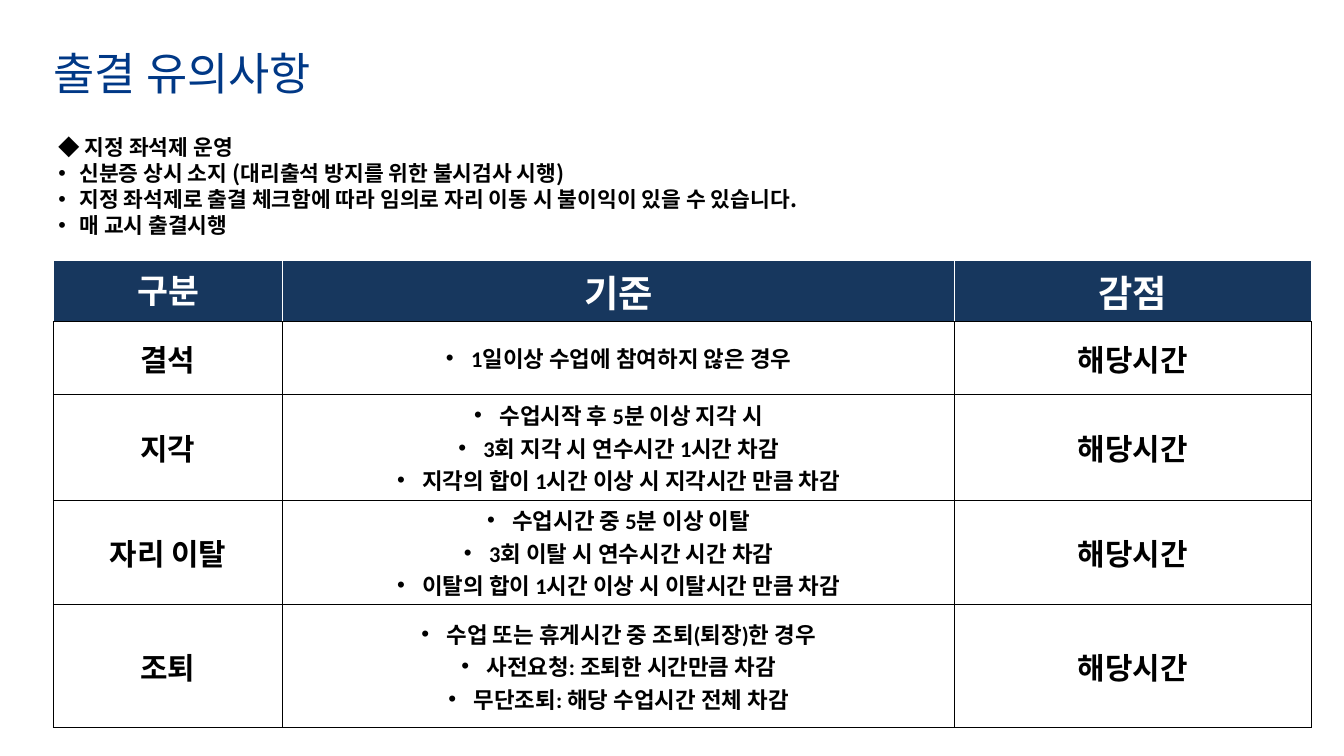
from lxml.etree import SubElement
from pptx import Presentation
from pptx.dml.color import RGBColor
from pptx.enum.text import MSO_ANCHOR as Anchor, MSO_AUTO_SIZE as AutoSize, PP_ALIGN as Align
from pptx.oxml.ns import qn
from pptx.util import Pt

COLORS = {"title": "003886", "header": "17375E", "white": "FFFFFF", "black": "000000"}
HANGUL, LATIN = "Noto Sans CJK KR", "Calibri"

TITLE = "출결 유의사항"
MARK, HEADING = "◆ ", "지정 좌석제 운영"
NOTICES = [
    "신분증 상시 소지 (대리출석 방지를 위한 불시검사 시행)",
    "지정 좌석제로 출결 체크함에 따라 임의로 자리 이동 시 불이익이 있을 수 있습니다.",
    "매 교시 출결시행",
]
HEADERS = [("구분", 36), ("기준", 40), ("감점", 40)]
RULES = [
    ("결석", ["1일이상 수업에 참여하지 않은 경우"], "해당시간"),
    ("지각", ["수업시작 후 5분 이상 지각 시", "3회 지각 시 연수시간 1시간 차감",
            "지각의 합이 1시간 이상 시 지각시간 만큼 차감"], "해당시간"),
    ("자리 이탈", ["수업시간 중 5분 이상 이탈", "3회 이탈 시 연수시간 시간 차감",
               "이탈의 합이 1시간 이상 시 이탈시간 만큼 차감"], "해당시간"),
    ("조퇴", ["수업 또는 휴게시간 중 조퇴(퇴장)한 경우", "사전요청: 조퇴한 시간만큼 차감",
            "무단조퇴: 해당 수업시간 전체 차감"], "해당시간"),
]
COL_WIDTHS = [246, 719.5, 382.5]
ROW_HEIGHTS = [54, 78.5, 113, 91.5, 132]


def place(s, left, top, width, height):
    s.left, s.top, s.width, s.height = Pt(left), Pt(top), Pt(width), Pt(height)


def style(r, size, color, font=HANGUL, bold=True):
    r.font.size, r.font.bold, r.font.name = Pt(size), bold, font
    r.font.color.rgb = RGBColor.from_string(COLORS[color])
    SubElement(r.font._element, qn("a:ea")).set("typeface", HANGUL)


def set_bullet(p, indent):
    pPr = p._p.get_or_add_pPr()
    pPr.set("marL", str(Pt(indent)))
    pPr.set("indent", str(-Pt(indent)))
    if indent:
        SubElement(pPr, qn("a:buFont")).set("typeface", "Arial")
        SubElement(pPr, qn("a:buChar")).set("char", "•")
    else:
        SubElement(pPr, qn("a:buNone"))


def set_borders(cell, sides):
    tcPr = cell._tc.get_or_add_tcPr()
    for side, color in zip("LRTB", sides):
        ln = SubElement(tcPr, qn(f"a:ln{side}"), w=str(Pt(1)))
        fill = SubElement(ln, qn("a:solidFill"))
        SubElement(fill, qn("a:srgbClr")).set("val", COLORS[color])


def fill_cell(cell, lines, size, header=False, bullets=False):
    set_borders(cell, ["white"] * 3 + ["black"] if header else ["black"] * 4)
    cell.fill.solid()
    cell.fill.fore_color.rgb = RGBColor.from_string(COLORS["header" if header else "white"])
    cell.vertical_anchor = Anchor.TOP if header else Anchor.MIDDLE
    cell.text_frame.text = "\n".join(lines)
    for p in cell.text_frame.paragraphs:
        p.alignment = Align.CENTER
        if bullets:
            set_bullet(p, 27)
        style(p.runs[0], size, "white" if header else "black", LATIN)


def add_title(slide):
    s = slide.shapes.title
    place(s, 57.6, 49, 795.6, 58.3)
    tf = s.text_frame
    tf.text = TITLE
    tf.auto_size, tf.vertical_anchor = AutoSize.NONE, Anchor.MIDDLE
    tf.margin_left = tf.margin_right = tf.margin_top = tf.margin_bottom = 0
    tf.paragraphs[0].alignment = Align.LEFT
    style(tf.paragraphs[0].runs[0], 48, "title", bold=False)


def add_notices(slide):
    s = slide.placeholders[1]
    place(s, 55.4, 140.4, 854.6, 118.8)
    tf = s.text_frame
    tf.text = "\n".join([MARK] + NOTICES)
    tf.auto_size, tf.vertical_anchor = AutoSize.NONE, Anchor.TOP
    tf.paragraphs[0].add_run().text = HEADING
    for i, p in enumerate(tf.paragraphs):
        set_bullet(p, 22.5 if i else 0)
        p.space_before, p.line_spacing = Pt(0), Pt(27.6)
        for r in p.runs:
            style(r, 23, "black", bold=r.text != MARK)


def add_rules(slide):
    table = slide.shapes.add_table(len(ROW_HEIGHTS), len(COL_WIDTHS), Pt(57), Pt(279.4),
                                   Pt(sum(COL_WIDTHS)), Pt(sum(ROW_HEIGHTS))).table
    for col, width in zip(table.columns, COL_WIDTHS):
        col.width = Pt(width)
    for row, height in zip(table.rows, ROW_HEIGHTS):
        row.height = Pt(height)
    for c, (text, size) in enumerate(HEADERS):
        fill_cell(table.cell(0, c), [text], size, header=True)
    for i, (kind, criteria, penalty) in enumerate(RULES, 1):
        fill_cell(table.cell(i, 0), [kind], 32)
        fill_cell(table.cell(i, 1), criteria, 24, bullets=True)
        fill_cell(table.cell(i, 2), [penalty], 32)


def main():
    """Build the attendance rules slide."""
    prs = Presentation()
    prs.slide_width, prs.slide_height = Pt(1440), Pt(810)
    slide = prs.slides.add_slide(prs.slide_layouts[1])
    add_title(slide)
    add_notices(slide)
    add_rules(slide)
    prs.save("out.pptx")


if __name__ == "__main__":
    main()
